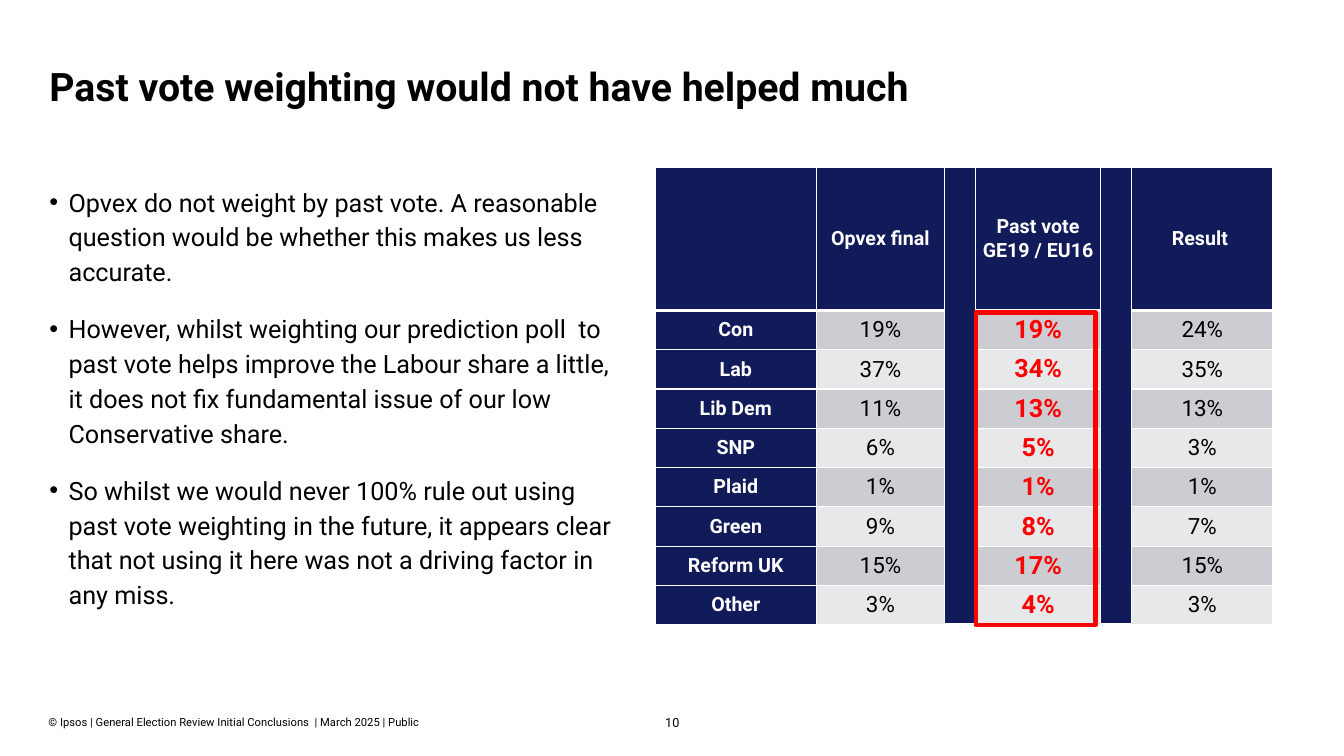
"""Build the slide on past vote weighting, with its table of vote shares."""

from dataclasses import dataclass

import lxml.etree
import pptx
import pptx.dml.color
import pptx.enum.shapes
import pptx.enum.text
import pptx.oxml.ns
import pptx.slide
import pptx.table
import pptx.text.text
import pptx.util

Pt = pptx.util.Pt
Align = pptx.enum.text.PP_ALIGN
Anchor = pptx.enum.text.MSO_ANCHOR
FONT = "Roboto"
NAVY, WHITE, BLACK, RED = "121B5A", "FFFFFF", "000000", "FF0000"
BANDS = ("CCCDD2", "E7E8EA")
HEADER_HEIGHT, ROW_HEIGHT = 102.24, 28.08

POINTS = (
    "Opvex do not weight by past vote. A reasonable question would be whether "
    "this makes us less accurate.",
    "However, whilst weighting our prediction poll  to past vote helps improve the "
    "Labour share a little, it does not fix fundamental issue of our low "
    "Conservative share.",
    "So whilst we would never 100% rule out using past vote weighting in the future, "
    "it appears clear that not using it here was not a driving factor in any miss.",
)


@dataclass(frozen=True)
class Box:
    left: float
    top: float
    width: float
    height: float

    def lengths(self) -> tuple[int, ...]:
        return tuple(Pt(side) for side in (self.left, self.top, self.width, self.height))


@dataclass(frozen=True)
class Column:
    width: float
    header: str = ""
    values: tuple[str, ...] = ()
    size: float = 16
    color: str = BLACK
    bold: bool = False
    fills: tuple[str, str] = BANDS


def shares(*percentages: int) -> tuple[str, ...]:
    return tuple(f"{percentage}%" for percentage in percentages)


PARTIES = ("Con", "Lab", "Lib Dem", "SNP", "Plaid", "Green", "Reform UK", "Other")
GAP = Column(22.3)
COLUMNS = (
    Column(115.2, "", PARTIES, 14, WHITE, True, (NAVY, NAVY)),
    Column(91.4, "Opvex final", shares(19, 37, 11, 6, 1, 9, 15, 3)),
    GAP,
    Column(89.3, "Past vote GE19 / EU16", shares(19, 34, 13, 5, 1, 8, 17, 4), 18, RED, True),
    GAP,
    Column(100.8, "Result ", shares(24, 35, 13, 3, 1, 7, 15, 3)),
)


def rgb(color: str) -> pptx.dml.color.RGBColor:
    return pptx.dml.color.RGBColor.from_string(color)


def add_child(parent: lxml.etree._Element, tag: str, **attributes: str) -> lxml.etree._Element:
    return lxml.etree.SubElement(parent, pptx.oxml.ns.qn(tag), attributes)


def write_text(
    paragraph: pptx.text.text._Paragraph,
    text: str,
    *,
    size: float,
    color: str = BLACK,
    bold: bool = False,
    align: Align = Align.LEFT,
    line_spacing: float = 1.0,
    before: float = 0,
    after: float = 0,
    bullet_indent: float = 0,
) -> None:
    if bullet_indent:
        properties = paragraph._p.get_or_add_pPr()
        properties.set("marL", str(Pt(bullet_indent)))
        properties.set("indent", str(-Pt(bullet_indent)))
        add_child(properties, "a:buFont", typeface="Arial")
        add_child(properties, "a:buChar", char="•")
    paragraph.alignment = align
    paragraph.line_spacing = line_spacing
    paragraph.space_before = Pt(before)
    paragraph.space_after = Pt(after)
    run = paragraph.add_run()
    run.text = text
    run.font.name = FONT
    run.font.size = Pt(size)
    run.font.bold = bold
    run.font.color.rgb = rgb(color)


def format_frame(frame: pptx.text.text.TextFrame, anchor: Anchor = Anchor.TOP) -> None:
    frame.margin_left = frame.margin_top = frame.margin_right = frame.margin_bottom = 0
    frame.word_wrap = True
    frame.auto_size = pptx.enum.text.MSO_AUTO_SIZE.NONE
    frame.vertical_anchor = anchor


def place_placeholder(
    shape: pptx.shapes.placeholder.SlidePlaceholder, box: Box
) -> pptx.text.text.TextFrame:
    shape.left, shape.top, shape.width, shape.height = box.lengths()
    format_frame(shape.text_frame)
    return shape.text_frame


def add_label(
    slide: pptx.slide.Slide, box: Box, text: str, *, size: float, anchor: Anchor, align: Align
) -> None:
    frame = slide.shapes.add_textbox(*box.lengths()).text_frame
    format_frame(frame, anchor)
    write_text(frame.paragraphs[0], text, size=size, align=align)


def format_cell(
    cell: pptx.table._Cell, fill: str, top_line: float = 1, bottom_line: float = 1
) -> None:
    cell.margin_left = cell.margin_right = Pt(5)
    cell.margin_top = cell.margin_bottom = 0
    cell.vertical_anchor = Anchor.MIDDLE
    properties = cell._tc.get_or_add_tcPr()
    for side, width in (("L", 1), ("R", 1), ("T", top_line), ("B", bottom_line)):
        line = add_child(properties, f"a:ln{side}", w=str(Pt(width)))
        add_child(add_child(line, "a:solidFill"), "a:srgbClr", val=WHITE)
    cell.fill.solid()
    cell.fill.fore_color.rgb = rgb(fill)


def add_share_table(slide: pptx.slide.Slide, box: Box) -> None:
    row_count = len(PARTIES) + 1
    table = slide.shapes.add_table(row_count, len(COLUMNS), *box.lengths()).table
    table.first_row = table.horz_banding = False
    for index, row in enumerate(table.rows):
        row.height = Pt(ROW_HEIGHT if index else HEADER_HEIGHT)
    for column_index, column in enumerate(COLUMNS):
        table.columns[column_index].width = Pt(column.width)
        header = table.cell(0, column_index)
        format_cell(header, NAVY, bottom_line=3)
        if column.header:
            write_text(header.text_frame.paragraphs[0], column.header,
                       size=14, color=WHITE, bold=True, align=Align.CENTER)
        for row_index in range(1, row_count):
            cell = table.cell(row_index, column_index)
            fill = column.fills[(row_index - 1) % 2] if column.values else NAVY
            format_cell(cell, fill, top_line=3 if row_index == 1 else 1)
            if column.values:
                write_text(cell.text_frame.paragraphs[0], column.values[row_index - 1],
                           size=column.size, color=column.color, bold=column.bold,
                           align=Align.CENTER)
        if not column.values:
            header.merge(table.cell(row_count - 1, column_index))


def add_highlight(slide: pptx.slide.Slide, box: Box) -> None:
    shape = slide.shapes.add_shape(pptx.enum.shapes.MSO_SHAPE.RECTANGLE, *box.lengths())
    shape.shadow.inherit = False
    shape.fill.background()
    shape.line.color.rgb = rgb(RED)
    shape.line.width = Pt(3.25)


def main() -> None:
    presentation = pptx.Presentation()
    presentation.slide_width, presentation.slide_height = Pt(960), Pt(540)
    slide = presentation.slides.add_slide(presentation.slide_layouts[1])

    title = place_placeholder(slide.shapes.title, Box(35.3, 48.2, 890, 56.2))
    write_text(title.paragraphs[0], "Past vote weighting would not have helped much",
               size=28, bold=True, line_spacing=0.9)

    body = place_placeholder(slide.placeholders[1], Box(35.3, 130.3, 414, 305.3))
    for index, point in enumerate(POINTS):
        paragraph = body.add_paragraph() if index else body.paragraphs[0]
        write_text(paragraph, point, size=18, line_spacing=1.15,
                   before=4 if index else 0, after=12, bullet_indent=13.7)

    add_share_table(slide, Box(468, 119.5, 441.3, HEADER_HEIGHT + len(PARTIES) * ROW_HEIGHT))
    add_highlight(slide, Box(697, 223.2, 85.7, 223.2))
    add_label(slide, Box(34.6, 511.2, 368, 9.4),
              "© Ipsos | General Election Review Initial Conclusions  | March 2025 | Public",
              size=8, anchor=Anchor.BOTTOM, align=Align.LEFT)
    add_label(slide, Box(460.8, 510.5, 38.9, 10.8), "10",
              size=9, anchor=Anchor.TOP, align=Align.CENTER)
    presentation.save("out.pptx")


if __name__ == "__main__":
    main()
